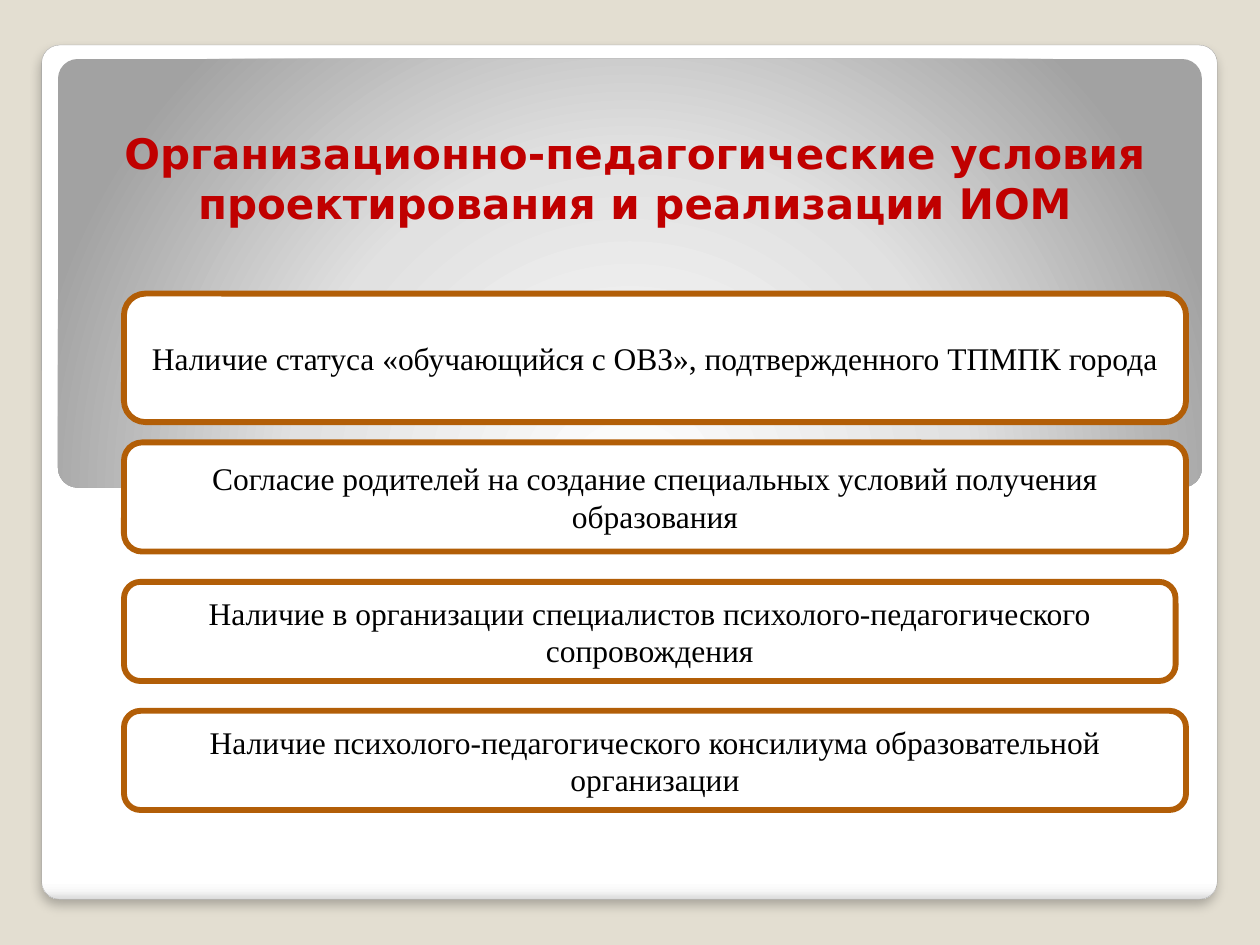
from lxml.etree import SubElement
from pptx import Presentation
from pptx.dml.color import RGBColor
from pptx.enum.shapes import MSO_SHAPE as Preset
from pptx.enum.text import MSO_ANCHOR as Anchor, MSO_AUTO_SIZE as AutoSize, PP_ALIGN as Align
from pptx.oxml.ns import qn
from pptx.util import Cm, Pt

COLOURS = {
    "background": "E3DED1",
    "title": "C00000",
    "text": "000000",
    "box": "FFFFFF",
    "border": "B25E07",
    "panel_edge": "A4A4A4",
    "shadow": "000000",
}
PANEL_STOPS = [(0, "FFFFFF"), (98, "FFFFFF"), (99, "F7F7F7"), (100, "DADADA")]
HEADER_STOPS = [(0, "FFFFFF"), (55, "E1E1E1"), (100, "A2A2A2")]
TITLE = "Организационно-педагогические условия проектирования и реализации ИОМ"
TITLE_FONT = {"name": "DejaVu Sans", "size": Pt(24), "bold": True}
BODY_FONT = {"name": "Times New Roman", "size": Pt(18), "bold": False}
BOX_LEFT = 2.5
CONDITIONS = [
    (5.92, 21.41, 2.59, "Наличие статуса «обучающийся с ОВЗ», подтвержденного ТПМПК города"),
    (8.92, 21.41, 2.2, "Согласие родителей на создание специальных условий получения образования"),
    (11.73, 21.2, 2, "Наличие в организации специалистов психолого-педагогического сопровождения"),
    (14.33, 21.41, 2, "Наличие психолого-педагогического консилиума образовательной организации"),
]


def rgb(name):
    """Return the named colour."""
    return RGBColor.from_string(COLOURS[name])


def apply_format(target, values):
    """Set every attribute in a dict of format values."""
    for name, value in values.items():
        setattr(target, name, value)


def add_node(parent, tag, **attributes):
    """Append a drawing element with the given attributes."""
    values = {name: str(value) for name, value in attributes.items()}
    return SubElement(parent, qn(f"a:{tag}"), values)


def add_rounded(page, left, top, width, height):
    """Add a rounded rectangle without a shadow."""
    box = page.shapes.add_shape(Preset.ROUNDED_RECTANGLE, Cm(left), Cm(top), Cm(width), Cm(height))
    box.shadow.inherit = False
    return box


def add_gradient(box, stops):
    """Give a shape gradient stops and return the gradient element."""
    properties = box._element.spPr
    gradient = add_node(properties, "gradFill", rotWithShape=1)
    properties.find(qn("a:prstGeom")).addnext(gradient)
    stop_list = add_node(gradient, "gsLst")
    for position, colour in stops:
        add_node(add_node(stop_list, "gs", pos=position * 1000), "srgbClr", val=colour)
    return gradient


def add_shadow(box):
    """Add a soft shadow below a shape."""
    effects = box._element.spPr.find(qn("a:effectLst"))
    shadow = add_node(effects, "outerShdw", blurRad=Pt(6), dist=Pt(4), dir=5400000, algn="t", rotWithShape=0)
    add_node(add_node(shadow, "srgbClr", val=COLOURS["shadow"]), "alpha", val=25000)


def add_panel(page):
    """Add the white card behind the content."""
    panel = add_rounded(page, 0.84, 0.91, 23.7, 17.22)
    panel.adjustments[0] = 0.021
    add_node(add_gradient(panel, PANEL_STOPS), "lin", ang=5400000, scaled=0)
    apply_format(panel.line, {"width": Pt(0.16)})
    panel.line.color.rgb = rgb("panel_edge")
    add_shadow(panel)


def add_header(page):
    """Add the grey band with its radial gradient."""
    header = add_rounded(page, 1.17, 1.19, 23.06, 8.64)
    header.adjustments[0] = 0.046
    circle = add_node(add_gradient(header, HEADER_STOPS), "path", path="circle")
    add_node(circle, "fillToRect", l=50000, t=175000, r=50000, b=-75000)
    header.line.fill.background()


def write_text(box, text, font, colour, frame_values):
    """Write one centred paragraph into a shape."""
    apply_format(box.text_frame, {"word_wrap": True, **frame_values})
    para = box.text_frame.paragraphs[0]
    para.alignment = Align.CENTER
    span = para.add_run()
    span.text = text
    apply_format(span.font, font)
    span.font.color.rgb = rgb(colour)


def add_title(page):
    """Place the title in front of the header band."""
    title = page.shapes.title
    apply_format(title, {"left": Cm(2), "top": Cm(1.93), "width": Cm(21.6), "height": Cm(2.8)})
    margins = {f"margin_{side}": Cm(0.13) for side in ("left", "top", "right", "bottom")}
    frame_values = {"vertical_anchor": Anchor.BOTTOM, "auto_size": AutoSize.NONE, **margins}
    write_text(title, TITLE, TITLE_FONT, "title", frame_values)
    page.shapes._spTree.append(title._element)


def add_condition(page, top, width, height, text):
    """Add one outlined box with a condition."""
    box = add_rounded(page, BOX_LEFT, top, width, height)
    box.fill.solid()
    box.fill.fore_color.rgb = rgb("box")
    box.line.width = Pt(3.35)
    box.line.color.rgb = rgb("border")
    write_text(box, text, BODY_FONT, "text", {"vertical_anchor": Anchor.MIDDLE})


def main():
    """Build and save the slide."""
    deck = Presentation()
    apply_format(deck, {"slide_width": Cm(25.4), "slide_height": Cm(19.05)})
    page = deck.slides.add_slide(deck.slide_layouts[5])
    page.background.fill.solid()
    page.background.fill.fore_color.rgb = rgb("background")
    add_panel(page)
    add_header(page)
    add_title(page)
    for condition in CONDITIONS:
        add_condition(page, *condition)
    deck.save("out.pptx")


if __name__ == "__main__":
    main()
